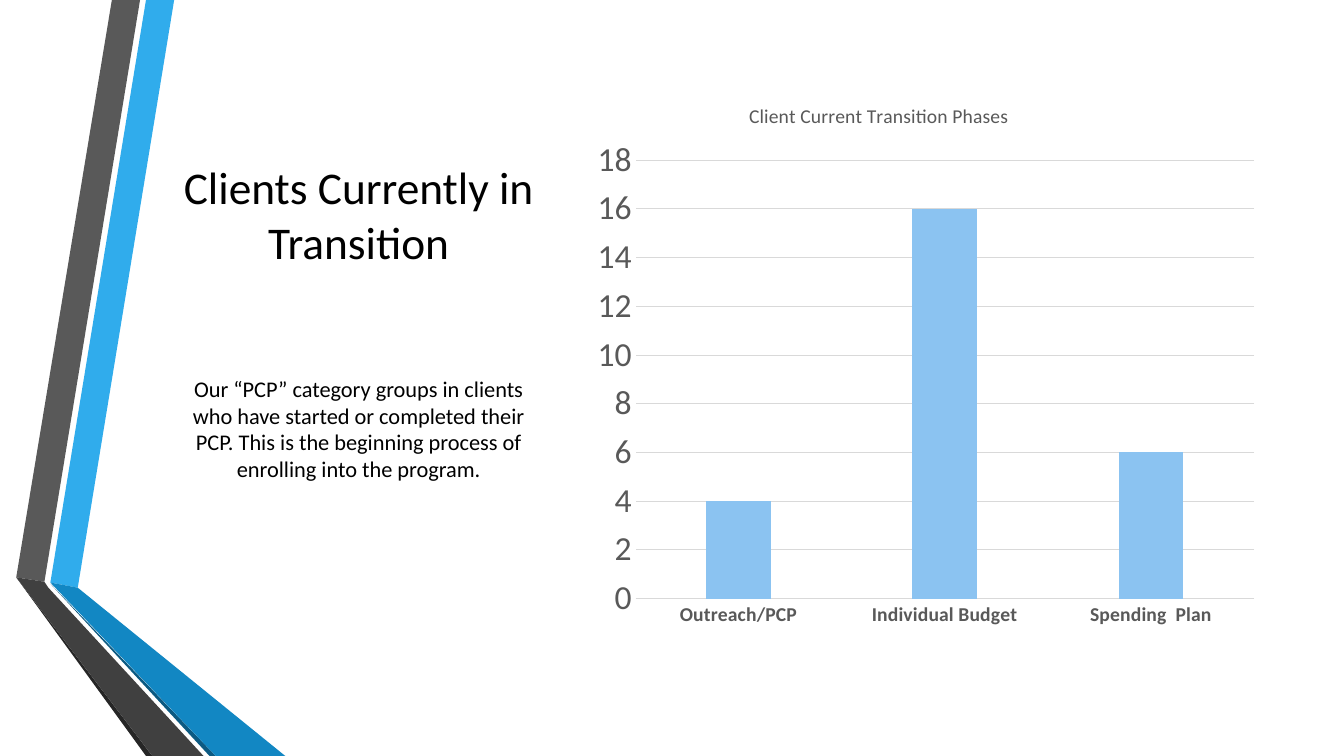
from dataclasses import dataclass

from lxml.etree import SubElement
from pptx import Presentation
from pptx.chart.data import CategoryChartData as ChartData
from pptx.dml.color import RGBColor as Color
from pptx.enum.chart import XL_CHART_TYPE as ChartType, XL_TICK_MARK as TickMark
from pptx.enum.text import MSO_ANCHOR as Anchor, MSO_AUTO_SIZE as AutoSize, PP_ALIGN as Align
from pptx.oxml.ns import qn
from pptx.util import Cm, Pt

TITLE = "Clients Currently in Transition"
BODY = (
    "Our “PCP” category groups in clients who have started or completed their PCP. "
    "This is the beginning process of enrolling into the program."
)
CHART_TITLE = "Client Current Transition Phases"
PHASES = {"Outreach/PCP": 4, "Individual Budget": 16, "Spending  Plan": 6}

RIBBONS = [
    ("30ACEC", [(1.27, 14.68), (1.96, 14.81), (4.39, 0), (3.68, 0)]),
    ("595959", [(3.53, 0), (2.82, 0), (0.41, 14.55), (1.12, 14.66)]),
    ("262626", [(0.41, 14.55), (3.68, 19.05), (3.84, 19.05)]),
    ("0C5A82", [(1.27, 14.71), (5.28, 19.05), (5.44, 19.05)]),
    ("1287C3", [(1.27, 14.68), (5.44, 19.05), (7.19, 19.05), (1.96, 14.81)]),
    ("404040", [(0.41, 14.55), (3.84, 19.05), (5.13, 19.05), (1.22, 14.81), (1.12, 14.66)]),
]

TITLE_AREA = (4.11, 4.45, 9.86, 3.81)
BODY_AREA = (4.11, 8.26, 9.86, 5.08)
CHART_AREA = (14.63, 1.91, 17.32, 14.17)


@dataclass(frozen=True)
class Theme:
    font: str = "Calibri"
    text: str = "000000"
    muted: str = "595959"
    grid: str = "D9D9D9"
    bar: str = "8BC3F1"
    title_size: float = 32.4
    body_size: float = 16
    label_size: float = 14
    value_size: float = 24


theme = Theme()


def style_font(font, size, color, bold=False):
    font.name = theme.font
    font.size = Pt(size)
    font.bold = bold
    font.color.rgb = Color.from_string(color)


def write(box, text, area, size, anchor, bottom=0.13, after=0):
    box.left, box.top, box.width, box.height = map(Cm, area)
    frame = box.text_frame
    frame.word_wrap = True
    frame.auto_size = AutoSize.NONE
    frame.vertical_anchor = anchor
    frame.margin_bottom = Cm(bottom)
    para = frame.paragraphs[0]
    para.alignment = Align.CENTER
    para.space_after = Pt(after)
    span = para.add_run()
    span.text = text
    style_font(span.font, size, theme.text)
    return para


def draw_ribbon(page, color, points):
    units = [(round(x * 100), round(y * 100)) for x, y in points]
    builder = page.shapes.build_freeform(*units[0], scale=Cm(0.01))
    builder.add_line_segments(units[1:], close=True)
    ribbon = builder.convert_to_shape()
    ribbon.shadow.inherit = False
    ribbon.fill.solid()
    ribbon.fill.fore_color.rgb = Color.from_string(color)
    ribbon.line.fill.background()


def place(parent, before, target=None, **fractions):
    for old in parent.findall(qn("c:layout")):
        parent.remove(old)
    layout = SubElement(parent, qn("c:layout"))
    manual = SubElement(layout, qn("c:manualLayout"))
    if target:
        SubElement(manual, qn("c:layoutTarget"), val=target)
    for name in ("x", "y"):
        SubElement(manual, qn(f"c:{name}Mode"), val="edge")
    for name, value in fractions.items():
        SubElement(manual, qn(f"c:{name}"), val=str(value))
    parent.find(qn(before)).addprevious(layout)


def draw_line(line):
    line.color.rgb = Color.from_string(theme.grid)
    line.width = Pt(0.75)


def add_phase_chart(page):
    data = ChartData()
    data.categories = list(PHASES)
    data.add_series("Series 1", list(PHASES.values()))
    chart = page.shapes.add_chart(
        ChartType.COLUMN_CLUSTERED, *map(Cm, CHART_AREA), data
    ).chart
    style_font(chart.font, 10, theme.text)
    chart.has_legend = False

    chart.has_title = True
    heading = chart.chart_title
    heading.include_in_layout = False
    span = heading.text_frame.paragraphs[0].add_run()
    span.text = CHART_TITLE
    style_font(span.font, theme.label_size, theme.muted)
    place(heading._element, "c:overlay", x=0.24, y=0.04)

    categories, values = chart.category_axis, chart.value_axis
    for axis in (categories, values):
        axis.major_tick_mark = axis.minor_tick_mark = TickMark.NONE
    style_font(categories.tick_labels.font, theme.label_size, theme.muted, bold=True)
    style_font(values.tick_labels.font, theme.value_size, theme.muted)
    draw_line(categories.format.line)
    draw_line(values.major_gridlines.format.line)
    values.format.line.fill.background()
    values.minimum_scale, values.maximum_scale, values.major_unit = 0, 18, 2

    plot = chart.plots[0]
    plot.vary_by_categories = False
    plot.gap_width, plot.overlap = 219, -27
    bars = plot.series[0].format
    bars.fill.solid()
    bars.fill.fore_color.rgb = Color.from_string(theme.bar)
    place(plot._element.getparent(), "c:barChart", "inner", x=0.08, y=0.15, w=0.9, h=0.78)


def main():
    deck = Presentation()
    deck.slide_width, deck.slide_height = Cm(33.87), Cm(19.05)
    page = deck.slides.add_slide(deck.slide_layouts[1])
    for color, points in RIBBONS:
        draw_ribbon(page, color, points)

    write(page.shapes.title, TITLE, TITLE_AREA, theme.title_size, Anchor.BOTTOM, bottom=1.5)
    para = write(
        page.placeholders[1], BODY, BODY_AREA, theme.body_size, Anchor.MIDDLE, after=6
    )
    properties = para._p.get_or_add_pPr()
    properties.set("marL", "0")
    properties.set("indent", "0")
    SubElement(properties, qn("a:buNone"))

    add_phase_chart(page)
    deck.save("out.pptx")


if __name__ == "__main__":
    main()
